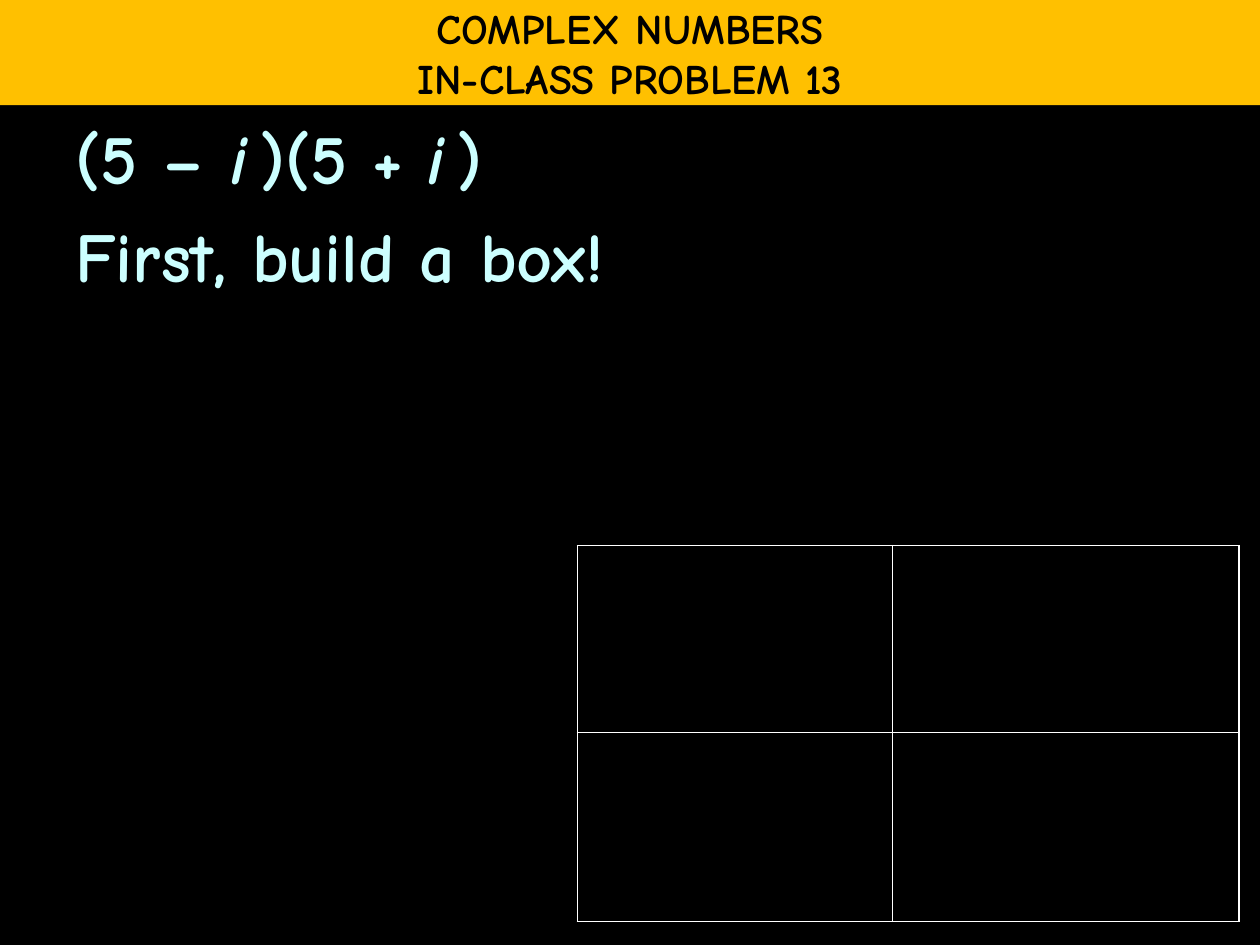
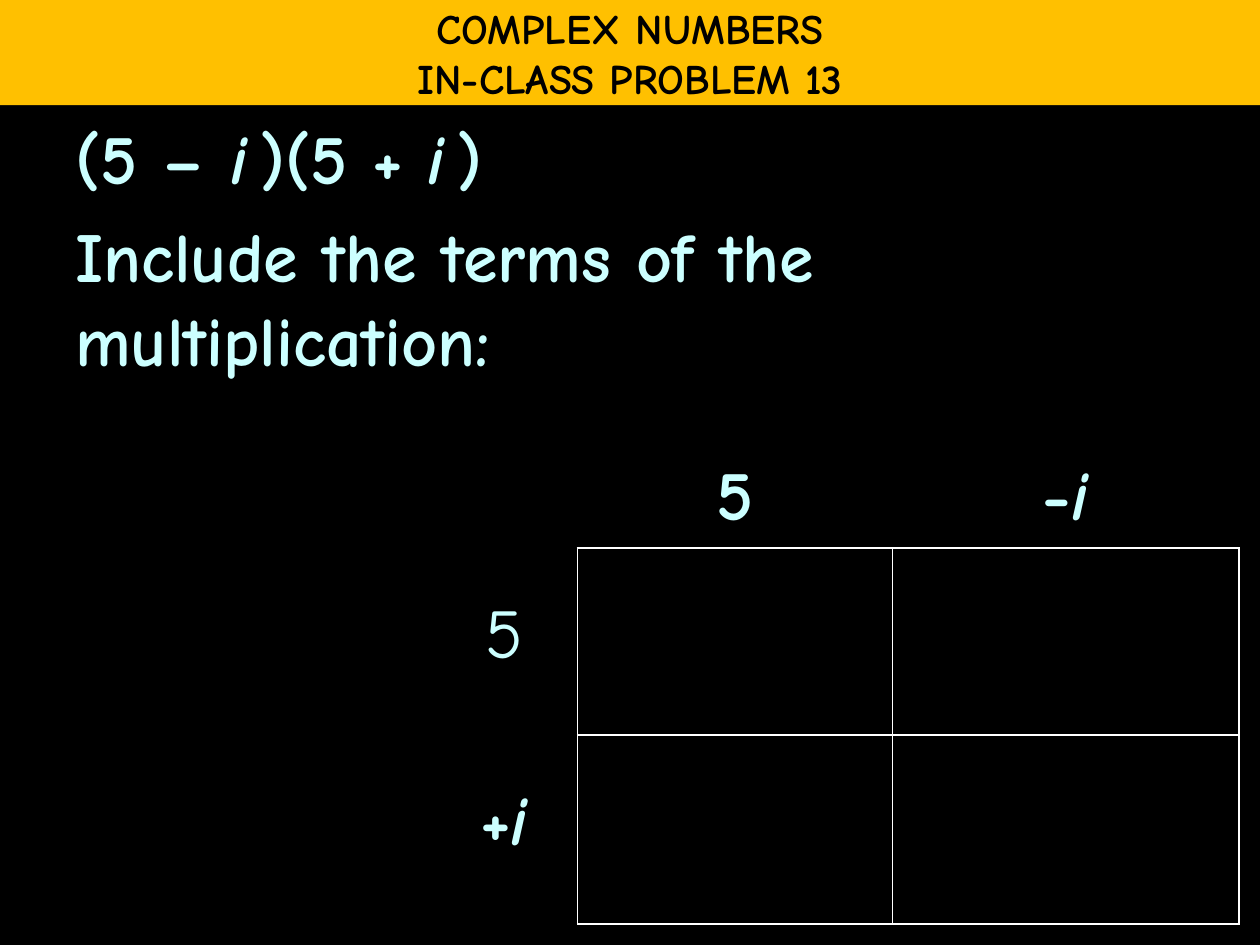
from dataclasses import dataclass

from lxml import etree
from pptx import Presentation
from pptx import util as u
from pptx.dml.color import RGBColor
from pptx.enum import shapes, text
from pptx.oxml import ns


@dataclass(frozen=True)
class Theme:
    font: str = "Comic Neue"
    background: str = "000000"
    band: str = "FFC000"
    band_text: str = "000000"
    body_text: str = "CCFFFF"
    grid: str = "FFFFFF"
    title_size: int = 24
    body_size: int = 40
    gap_size: int = 20
    space_before: int = 8


@dataclass(frozen=True)
class Run:
    text: str
    italic: bool = False
    bold: bool = True
    small: bool = False


TITLE = ["COMPLEX NUMBERS", "IN-CLASS PROBLEM 13"]
I = Run("i", italic=True)
GAP = Run(" ", italic=True, small=True)
EXPRESSION = [Run("(5 – "), I, GAP, Run(")(5 + "), I, GAP, Run(")")]
COLUMN_WIDTHS = [2.96, 6.35, 6.99]
ROW_HEIGHTS = [1.9, 3.77, 3.81]

# Each step: instruction, then the terms keyed by (row, column) of the box
STEPS = [
    ("First, build a box!", {}),
    ("Include the terms of the multiplication:", {
        (0, 1): [Run("5")],
        (0, 2): [Run("-"), I],
        (1, 0): [Run("5", bold=False)],
        (2, 0): [Run("+"), I],
    }),
]


class Deck:
    def __init__(self, theme):
        self.theme = theme
        self.presentation = Presentation()
        self.presentation.slide_width = u.Cm(25.4)
        self.presentation.slide_height = u.Cm(19.05)
        self.slide = None

    def add_slide(self):
        self.slide = self.presentation.slides.add_slide(self.presentation.slide_layouts[6])
        self.paint(self.slide.background.fill, self.theme.background)

    def paint(self, fill, color):
        fill.solid()
        fill.fore_color.rgb = RGBColor.from_string(color)

    def add_runs(self, paragraph, runs, size, color):
        for item in runs:
            run = paragraph.add_run()
            run.text = item.text
            font = run.font
            font.name = self.theme.font
            font.size = u.Pt(self.theme.gap_size if item.small else size)
            font.bold, font.italic = item.bold, item.italic
            font.color.rgb = RGBColor.from_string(color)

    def add_lines(self, frame, lines, size, color, align, space_before=0):
        for index, runs in enumerate(lines):
            paragraph = frame.paragraphs[0] if index == 0 else frame.add_paragraph()
            paragraph.alignment = align
            paragraph.space_before = u.Pt(space_before)
            self.add_runs(paragraph, runs, size, color)

    def title_band(self, lines):
        band = self.slide.shapes.add_shape(
            shapes.MSO_SHAPE.RECTANGLE, 0, 0, self.presentation.slide_width, u.Cm(2.12))
        band.shadow.inherit = False
        self.paint(band.fill, self.theme.band)
        band.line.fill.background()
        frame = band.text_frame
        frame.word_wrap = False
        frame.vertical_anchor = text.MSO_ANCHOR.MIDDLE
        self.add_lines(frame, [[Run(line)] for line in lines], self.theme.title_size,
                       self.theme.band_text, text.PP_ALIGN.CENTER)

    def body(self, lines):
        box = self.slide.shapes.add_textbox(u.Cm(1.27), u.Cm(2.18), u.Cm(22.86), u.Cm(15.67))
        box.text_frame.word_wrap = True
        self.add_lines(box.text_frame, lines, self.theme.body_size, self.theme.body_text,
                       text.PP_ALIGN.LEFT, self.theme.space_before)

    def multiplication_box(self, terms):
        """Draw a ruled 2 x 2 box with unruled header cells above and to its left."""
        table = self.slide.shapes.add_table(
            len(ROW_HEIGHTS), len(COLUMN_WIDTHS), u.Cm(8.68), u.Cm(9.1),
            u.Cm(sum(COLUMN_WIDTHS)), u.Cm(sum(ROW_HEIGHTS))).table
        table.first_row = table.horz_banding = False
        for column, width in zip(table.columns, COLUMN_WIDTHS):
            column.width = u.Cm(width)
        for r, height in enumerate(ROW_HEIGHTS):
            table.rows[r].height = u.Cm(height)
            for c in range(len(COLUMN_WIDTHS)):
                cell = table.cell(r, c)
                inside = r > 0 and c > 0
                self.borders(cell, {"L": inside, "R": r > 0, "T": inside, "B": c > 0})
                self.paint(cell.fill, self.theme.background)
                if (r, c) in terms:
                    if r > 0:
                        cell.margin_top = u.Cm(0.96)
                    self.add_lines(cell.text_frame, [terms[r, c]], self.theme.body_size,
                                   self.theme.body_text, text.PP_ALIGN.CENTER)

    def borders(self, cell, sides):
        properties = cell._tc.get_or_add_tcPr()
        for side, ruled in sides.items():
            line = etree.SubElement(properties, ns.qn(f"a:ln{side}"), w=str(u.Pt(1)))
            if ruled:
                fill = etree.SubElement(line, ns.qn("a:solidFill"))
                etree.SubElement(fill, ns.qn("a:srgbClr"), val=self.theme.grid)
            else:
                etree.SubElement(line, ns.qn("a:noFill"))


def main():
    deck = Deck(Theme())
    for instruction, terms in STEPS:
        deck.add_slide()
        deck.body([EXPRESSION, [Run(instruction)]])
        deck.title_band(TITLE)
        deck.multiplication_box(terms)
    deck.presentation.save("out.pptx")


if __name__ == "__main__":
    main()
